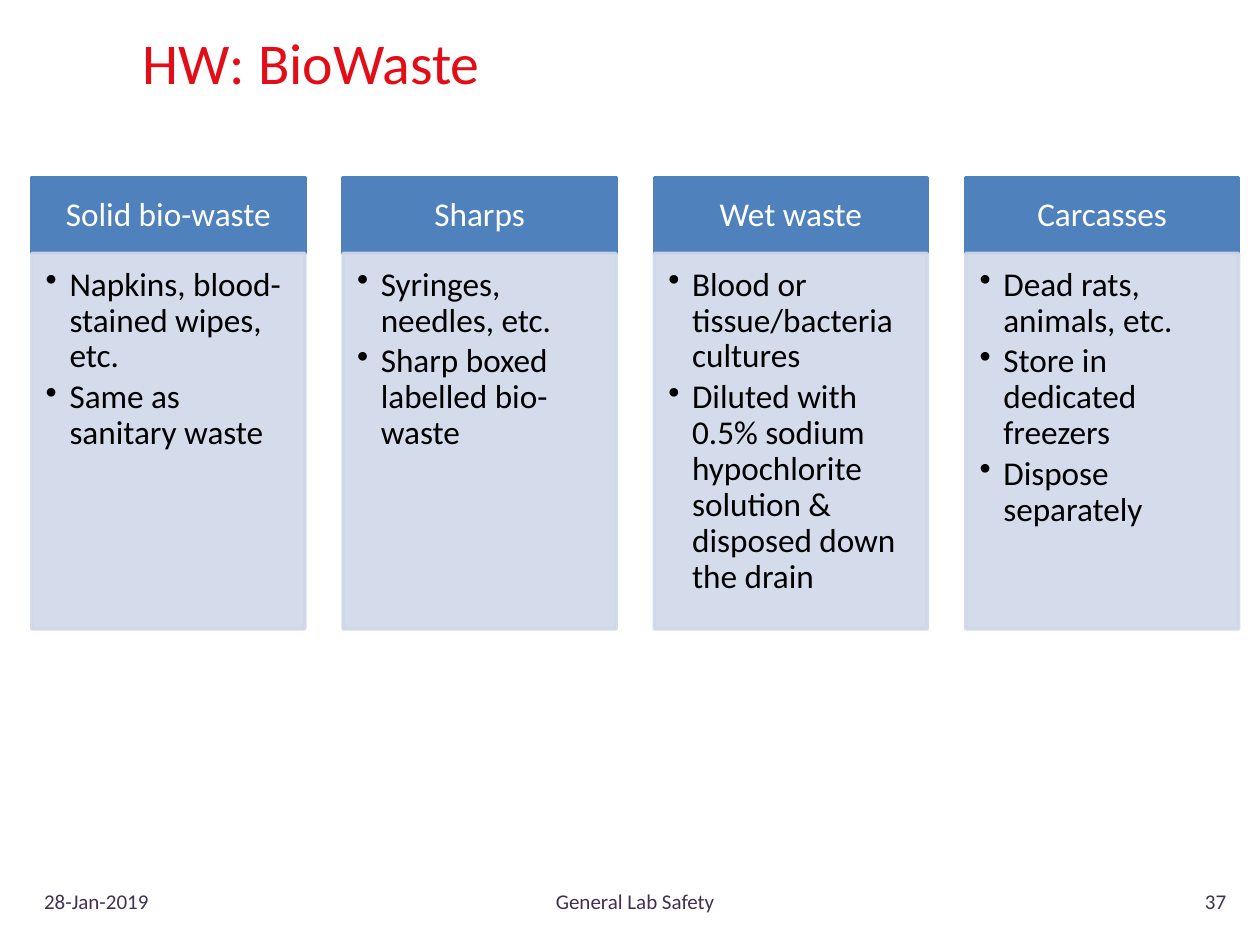
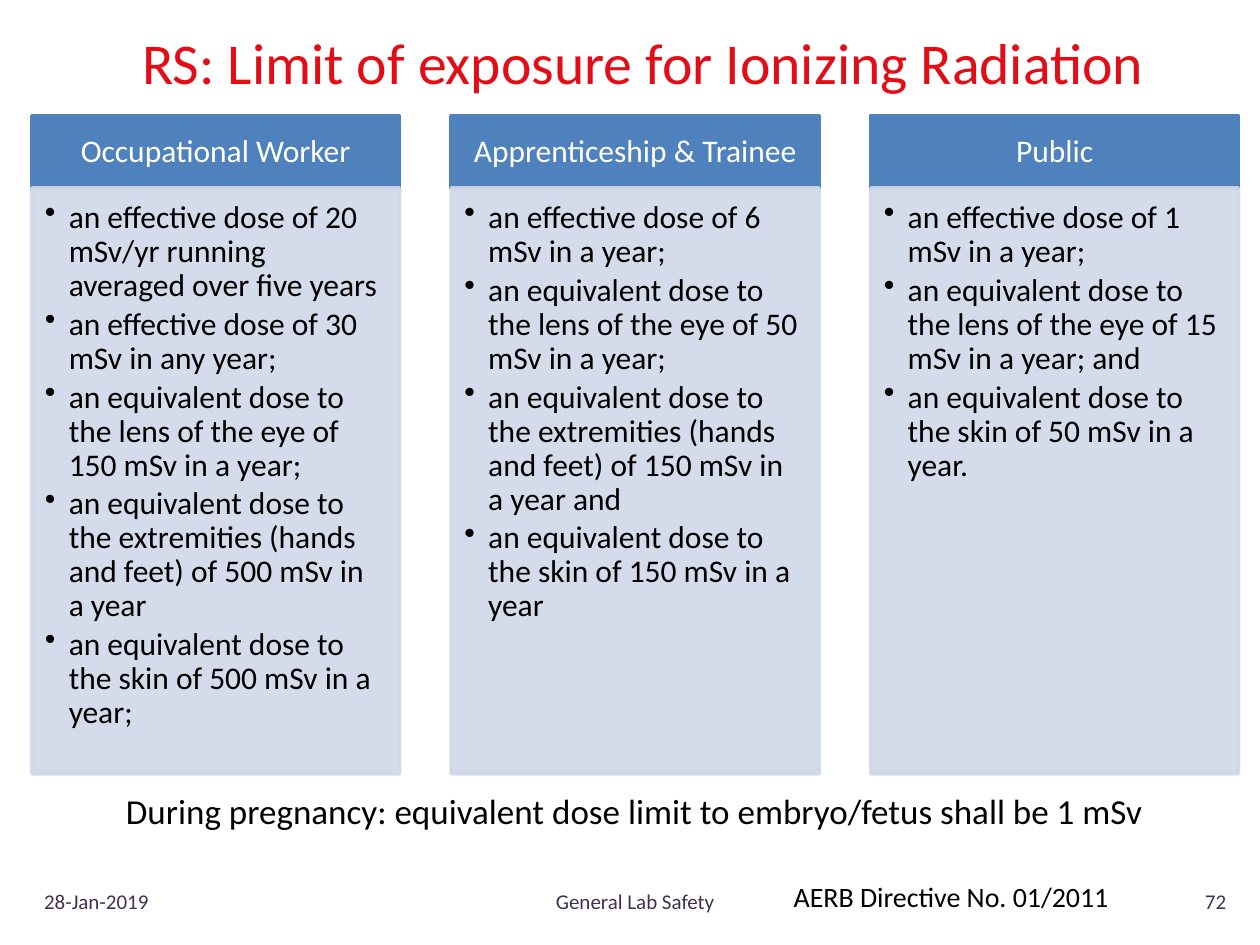
from dataclasses import dataclass

from lxml import etree
from pptx import Presentation
from pptx.dml.color import RGBColor
from pptx.enum.shapes import MSO_SHAPE
from pptx.enum.text import MSO_ANCHOR, PP_ALIGN
from pptx.oxml.ns import qn
from pptx.util import Cm, Pt

RECT = MSO_SHAPE.RECTANGLE
TOP, MIDDLE = MSO_ANCHOR.TOP, MSO_ANCHOR.MIDDLE
LEFT, CENTER, RIGHT = PP_ALIGN.LEFT, PP_ALIGN.CENTER, PP_ALIGN.RIGHT


@dataclass(frozen=True)
class Theme:
    font: str = "Calibri"
    title: str = "E30D17"
    footer: str = "403152"
    header: str = "4F81BD"
    header_text: str = "FFFFFF"
    body: str = "D0D8E8"
    text: str = "000000"
    body_opacity: int = 90
    title_size: int = 33
    footer_size: int = 12
    remark_size: int = 20
    reference_size: int = 16


THEME = Theme()

# Shared horizontal extent of columns and footer, in cm
MARGIN, CONTENT_WIDTH = 0.64, 24.33
GAP_RATIO = 0.14  # gap between columns, as a share of the column width

BIOWASTE = {
    "Solid bio-waste": ["Napkins, blood-stained wipes, etc.", "Same as sanitary waste"],
    "Sharps": ["Syringes, needles, etc.", "Sharp boxed labelled bio-waste"],
    "Wet waste": [
        "Blood or tissue/bacteria cultures",
        "Diluted with 0.5% sodium hypochlorite solution & disposed down the drain",
    ],
    "Carcasses": [
        "Dead rats, animals, etc.",
        "Store in dedicated freezers",
        "Dispose separately",
    ],
}

EXPOSURE_LIMITS = {
    "Occupational Worker": [
        "an effective dose of 20 mSv/yr running averaged over five years",
        "an effective dose of 30 mSv in any year;",
        "an equivalent dose to the lens of the eye of 150 mSv in a year;",
        "an equivalent dose to the extremities (hands and feet) of 500 mSv in a year",
        "an equivalent dose to the skin of 500 mSv in a year;",
    ],
    "Apprenticeship & Trainee": [
        "an effective dose of 6 mSv in a year;",
        "an equivalent dose to the lens of the eye of 50 mSv in a year;",
        "an equivalent dose to the extremities (hands and feet) of 150 mSv in a year and",
        "an equivalent dose to the skin of 150 mSv in a year",
    ],
    "Public": [
        "an effective dose of 1 mSv in a year;",
        "an equivalent dose to the lens of the eye of 15 mSv in a year; and",
        "an equivalent dose to the skin of 50 mSv in a year.",
    ],
}


def write(shape, *lines, size, color=THEME.text, align=LEFT, anchor=TOP, wrap=True,
          insets=None, spacing=None, after=0, bulleted=False):
    """Fill a shape with one paragraph per line; insets are left, top, right, bottom."""
    frame = shape.text_frame
    frame.word_wrap = wrap
    frame.vertical_anchor = anchor
    if insets:
        (frame.margin_left, frame.margin_top,
         frame.margin_right, frame.margin_bottom) = insets
    for index, line in enumerate(lines):
        paragraph = frame.add_paragraph() if index else frame.paragraphs[0]
        if bulleted:
            add_bullet(paragraph)
        paragraph.alignment = align
        paragraph.line_spacing = spacing
        paragraph.space_after = Pt(after)
        run = paragraph.add_run()
        run.text = line
        run.font.name = THEME.font
        run.font.size = Pt(size)
        run.font.color.rgb = RGBColor.from_string(color)


def add_bullet(paragraph):
    properties = paragraph._p.get_or_add_pPr()
    properties.set("marL", str(Cm(0.48)))
    properties.set("indent", str(-Cm(0.48)))
    etree.SubElement(properties, qn("a:buChar")).set("char", "•")


def add_label(slide, box, text, **style):
    write(slide.shapes.add_textbox(*map(Cm, box)), text, **style)


def add_panel(slide, box, color, opacity=100):
    panel = slide.shapes.add_shape(RECT, *map(Cm, box))
    panel.shadow.inherit = False
    panel.line.width = Pt(2)
    for fill in (panel.fill, panel.line.fill):
        fill.solid()
        fill.fore_color.rgb = RGBColor.from_string(color)
    if opacity < 100:
        for tone in panel._element.spPr.iter(qn("a:srgbClr")):
            etree.SubElement(tone, qn("a:alpha")).set("val", str(opacity * 1000))
    return panel


def add_column(slide, box, heading, points, header_height, size):
    """Heading band above a bulleted panel; insets scale with the type size."""
    left, top, width, height = box
    side, edge, upper, lower = (Pt(size * em) for em in (0.56, 0.32, 0.42, 0.63))

    # Heading band
    band = add_panel(slide, (left, top, width, header_height), THEME.header)
    write(band, heading, size=size, color=THEME.header_text, align=CENTER,
          anchor=MIDDLE, insets=(side, edge, side, edge), spacing=0.9)

    # Bulleted panel
    panel = add_panel(slide, (left, top + header_height, width, height - header_height),
                      THEME.body, THEME.body_opacity)
    write(panel, *points, size=size, insets=(upper, upper, side, lower),
          spacing=0.9, after=0.15 * size, bulleted=True)


def add_columns(slide, box, columns, header_height, size):
    left, top, total, height = box
    count = len(columns)
    width = total / (count + (count - 1) * GAP_RATIO)
    for index, (heading, points) in enumerate(columns.items()):
        column_left = left + index * width * (1 + GAP_RATIO)
        add_column(slide, (column_left, top, width, height), heading, points,
                   header_height, size)


def add_footer(slide, box, number):
    left, top, width, height = box
    date_width, name_width, number_width = 2.97, 13.54, 2.11
    parts = (
        ("28-Jan-2019", left, date_width, LEFT),
        ("General Lab Safety", left + (width - name_width) / 2, name_width, CENTER),
        (str(number), left + width - number_width, number_width, RIGHT),
    )
    for text, part_left, part_width, align in parts:
        add_label(slide, (part_left, top, part_width, height), text,
                  size=THEME.footer_size, color=THEME.footer, align=align, anchor=MIDDLE)


def add_column_slide(deck, title, number, columns, top, height, header_height, size):
    """Title, row of columns and footer."""
    slide = deck.slides.add_slide(deck.slide_layouts[6])
    add_label(slide, (2.62, 0.33, 22.35, 1.83), title,
              size=THEME.title_size, color=THEME.title, anchor=MIDDLE)
    add_columns(slide, (MARGIN, top, CONTENT_WIDTH, height), columns, header_height, size)
    add_footer(slide, (MARGIN, 17.65, CONTENT_WIDTH, 1.02), number)
    return slide


def main():
    deck = Presentation()
    deck.slide_width, deck.slide_height = Cm(25.4), Cm(19.05)

    add_column_slide(deck, "HW: BioWaste", 37, BIOWASTE,
                     top=3.58, height=9.1, header_height=1.53, size=19)

    limits = add_column_slide(deck, "RS: Limit of exposure for Ionizing Radiation", 72,
                              EXPOSURE_LIMITS, top=2.34, height=13.26,
                              header_height=1.45, size=18)
    # Remark and reference below the columns
    add_label(limits, (2.29, 15.8, 21.06, 1.12),
              "During pregnancy: equivalent dose limit to embryo/fetus shall be 1 mSv",
              size=THEME.remark_size)
    add_label(limits, (15.75, 17.6, 7.09, 0.94), "AERB Directive No. 01/2011",
              size=THEME.reference_size, wrap=False)

    deck.save("out.pptx")


if __name__ == "__main__":
    main()
